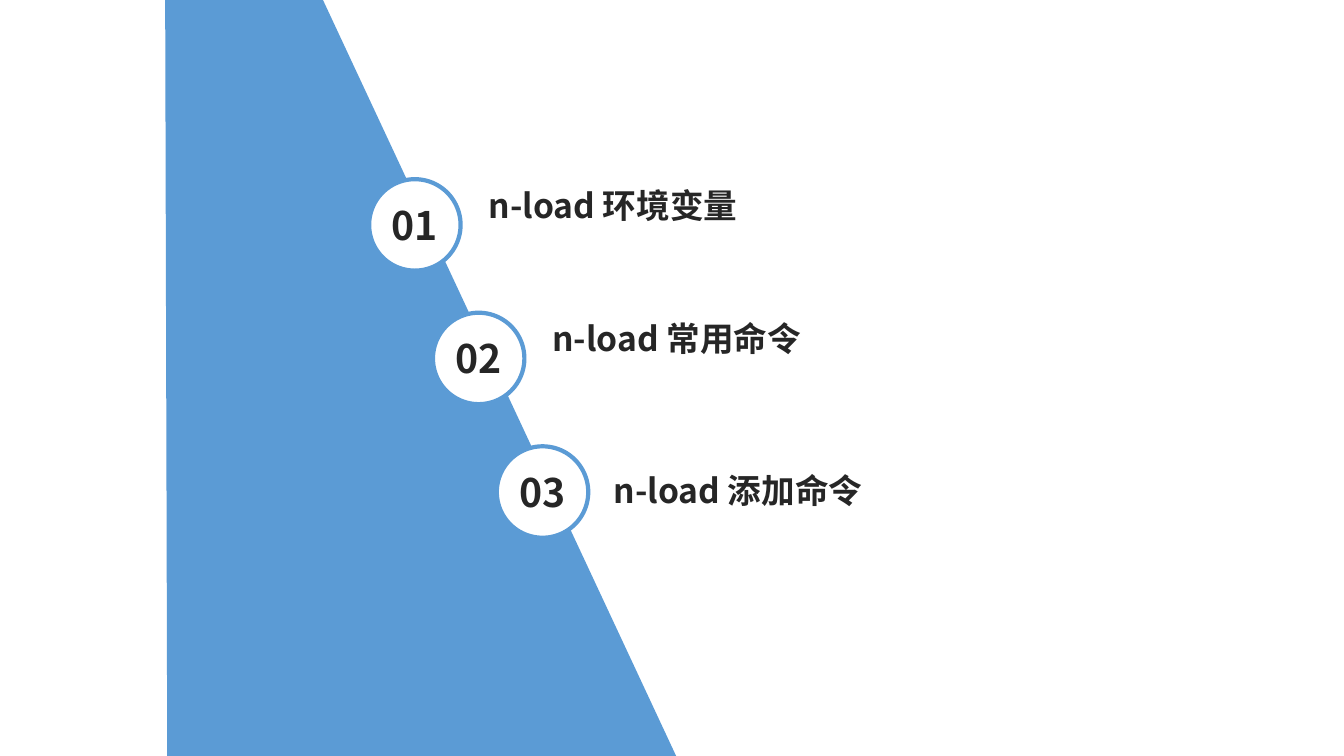
from dataclasses import dataclass

from pptx import Presentation
from pptx.dml.color import RGBColor
from pptx.enum.shapes import MSO_SHAPE
from pptx.enum.text import MSO_AUTO_SIZE, PP_ALIGN
from pptx.shapes.shapetree import GroupShapes, SlideShapes
from pptx.util import Pt

OVAL = MSO_SHAPE.OVAL
GROW = MSO_AUTO_SIZE.SHAPE_TO_FIT_TEXT
LEFT, CENTER = PP_ALIGN.LEFT, PP_ALIGN.CENTER

COLORS = {"blue": "5B9BD5", "white": "FFFFFF", "ink": "262626"}
FONT = "Noto Sans CJK SC"

BAND_OUTLINE = [(483, 540), (230.4, -0.7), (118, -0.7), (119.5, 543)]

BADGE_SIZE = 65.3
BADGE_LEFT, BADGE_TOP = 263.7, 128
BADGE_STEP_X, BADGE_STEP_Y = 45.6, 95.4
NUMBER_WIDTH, NUMBER_HEIGHT, NUMBER_DROP = 53.3, 43.2, 12
LABEL_HEIGHT = 36


@dataclass(frozen=True)
class Chapter:
    title: str
    left: float
    top: float
    width: float


CHAPTERS = [
    Chapter("n-load 环境变量", 342, 128.9, 440),
    Chapter("n-load 常用命令", 387.4, 223.2, 393.8),
    Chapter("n-load 添加命令", 431.3, 331.9, 393.8),
]


def color(name: str) -> RGBColor:
    return RGBColor.from_string(COLORS[name])


def add_band(shapes: SlideShapes) -> None:
    """Draw the slanted blue area behind the chapter badges."""
    start, *corners = [(Pt(x), Pt(y)) for x, y in BAND_OUTLINE]
    builder = shapes.build_freeform(*start)
    builder.add_line_segments(corners, close=True)
    band = builder.convert_to_shape()
    band.shadow.inherit = False
    band.fill.solid()
    band.fill.fore_color.rgb = color("blue")
    band.line.fill.background()


def add_text(shapes: SlideShapes | GroupShapes, text: str, left: float, top: float,
             width: float, height: float, size: float, align: PP_ALIGN) -> None:
    box = shapes.add_textbox(Pt(left), Pt(top), Pt(width), Pt(height))
    frame = box.text_frame
    frame.word_wrap = True
    frame.auto_size = GROW
    frame.text = text
    para = frame.paragraphs[0]
    para.alignment = align
    font = para.runs[0].font
    font.name = FONT
    font.size = Pt(size)
    font.bold = True
    font.color.rgb = color("ink")


def add_badge(shapes: SlideShapes, index: int) -> None:
    left = BADGE_LEFT + index * BADGE_STEP_X
    top = BADGE_TOP + index * BADGE_STEP_Y
    group = shapes.add_group_shape()
    circle = group.shapes.add_shape(OVAL, Pt(left), Pt(top), Pt(BADGE_SIZE), Pt(BADGE_SIZE))
    circle.shadow.inherit = False
    circle.fill.solid()
    circle.fill.fore_color.rgb = color("white")
    circle.line.color.rgb = color("blue")
    circle.line.width = Pt(3)
    number_left = left + (BADGE_SIZE - NUMBER_WIDTH) / 2
    add_text(group.shapes, f"{index + 1:02}", number_left, top + NUMBER_DROP,
             NUMBER_WIDTH, NUMBER_HEIGHT, 28, CENTER)


def main() -> None:
    deck = Presentation()
    deck.slide_width, deck.slide_height = Pt(960), Pt(540)
    blank_layout = deck.slide_layouts[6]
    page = deck.slides.add_slide(blank_layout)
    add_band(page.shapes)
    for index, chapter in enumerate(CHAPTERS):
        add_badge(page.shapes, index)
        add_text(page.shapes, chapter.title, chapter.left, chapter.top,
                 chapter.width, LABEL_HEIGHT, 24, LEFT)
    deck.save("out.pptx")


if __name__ == "__main__":
    main()
